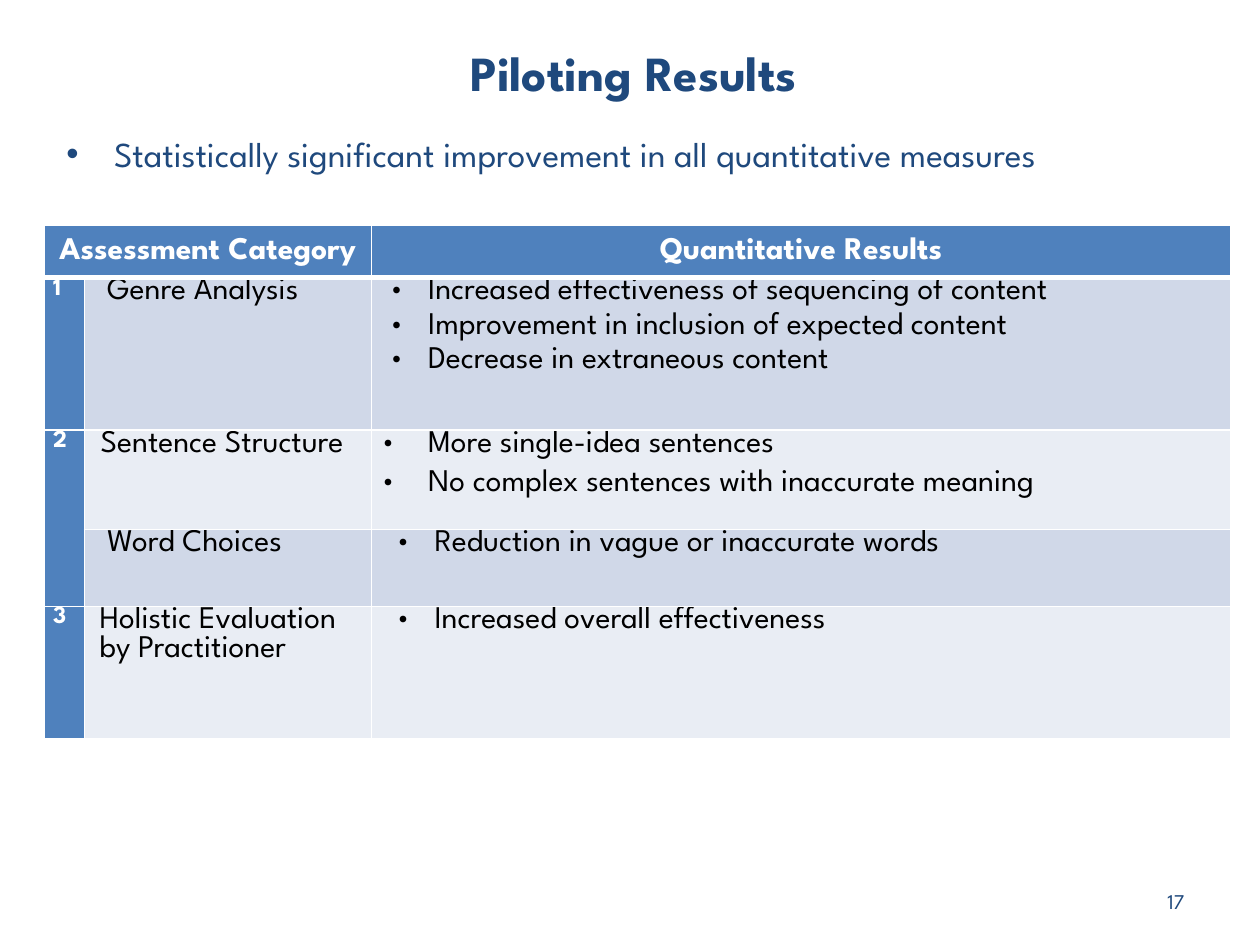
from typing import NamedTuple

from lxml.etree import SubElement
from pptx import Presentation
from pptx.dml.color import RGBColor
from pptx.enum.text import MSO_ANCHOR, PP_ALIGN
from pptx.oxml.ns import qn
from pptx.util import Cm, Pt

FONT = "League Spartan"
NAVY, BLUE, WHITE, BLACK = "1F497D", "4F81BD", "FFFFFF", "000000"
DARK_BAND, LIGHT_BAND = "D0D8E8", "E9EDF4"


class ResultRow(NamedTuple):
    number: str
    category: str
    category_indent: float
    results: list[str]
    margin: float
    hanging: float
    space_after: float
    band: str


RESULTS = [
    ResultRow("1", "Genre Analysis", 0.28,
              ["Increased effectiveness of sequencing of content",
               "Improvement in inclusion of expected content",
               "Decrease in extraneous content"], 0.96, 0.79, 3, DARK_BAND),
    ResultRow("2", "Sentence Structure", 0.15,
              ["More single-idea sentences",
               "No complex sentences with inaccurate meaning"],
              0.96, 0.96, 6, LIGHT_BAND),
    ResultRow("", " Word Choices", 0.13,
              ["Reduction in vague or inaccurate words"],
              1.09, 0.79, 3, DARK_BAND),
    ResultRow("3", "Holistic Evaluation by Practitioner", 0.13,
              ["Increased overall effectiveness"], 1.09, 0.79, 3, LIGHT_BAND),
]
COLUMN_WIDTHS = [0.81, 5.79, 17.32]
ROW_HEIGHTS = [1.05, 3.07, 2.01, 1.55, 2.67]


def color(value: str) -> RGBColor:
    return RGBColor.from_string(value)


def write(frame, *lines: str, size: float = 18, ink: str = BLACK,
          bold: bool = False, align=PP_ALIGN.LEFT, margin: float = 0,
          hanging: float = 0, space_after: float = 0, bullet_font: str = "") -> None:
    """Write one formatted paragraph per line; a bullet font makes a list."""
    frame.word_wrap = True
    for index, line in enumerate(lines):
        paragraph = frame.paragraphs[0] if index == 0 else frame.add_paragraph()
        paragraph.alignment = align
        paragraph.space_before, paragraph.space_after = Pt(0), Pt(space_after)
        properties = paragraph._p.get_or_add_pPr()
        properties.set("marL", str(Cm(margin)))
        properties.set("indent", str(-Cm(hanging)))
        if bullet_font:
            SubElement(properties, qn("a:buFont"), typeface=bullet_font)
            SubElement(properties, qn("a:buChar"), char="•")
        run = paragraph.add_run()
        run.text = line
        run.font.name, run.font.size, run.font.bold = FONT, Pt(size), bold
        run.font.color.rgb = color(ink)


def add_text(slide, left: float, top: float, width: float, height: float,
             text: str, **text_format):
    box = slide.shapes.add_textbox(Cm(left), Cm(top), Cm(width), Cm(height))
    write(box.text_frame, text, **text_format)
    return box


def format_cell(cell, fill: str, top_line: float = 1, bottom_line: float = 1) -> None:
    cell.margin_left = cell.margin_right = Cm(0.18)
    cell.margin_top = cell.margin_bottom = 0
    properties = cell._tc.get_or_add_tcPr()
    sides = {"lnL": 1, "lnR": 1, "lnT": top_line, "lnB": bottom_line}
    for side, width in sides.items():
        line = SubElement(properties, qn(f"a:{side}"), w=str(Pt(width)))
        line_fill = SubElement(line, qn("a:solidFill"))
        SubElement(line_fill, qn("a:srgbClr"), val=WHITE)
    cell.fill.solid()
    cell.fill.fore_color.rgb = color(fill)


def add_results_table(slide) -> None:
    table = slide.shapes.add_table(
        len(ROW_HEIGHTS), len(COLUMN_WIDTHS), Cm(0.89), Cm(4.55),
        Cm(sum(COLUMN_WIDTHS)), Cm(sum(ROW_HEIGHTS))).table
    for column, width in zip(table.columns, COLUMN_WIDTHS):
        column.width = Cm(width)
    for row, height in zip(table.rows, ROW_HEIGHTS):
        row.height = Cm(height)

    # Header
    for cell in table.rows[0].cells:
        format_cell(cell, BLUE, bottom_line=3)
        cell.vertical_anchor = MSO_ANCHOR.MIDDLE
    for column, heading in ((0, "Assessment Category"), (2, "Quantitative Results")):
        write(table.cell(0, column).text_frame, heading, ink=WHITE, bold=True,
              align=PP_ALIGN.CENTER)
    table.cell(0, 0).merge(table.cell(0, 1))

    # Body
    for index, result in enumerate(RESULTS, start=1):
        number, category, details = table.rows[index].cells
        for cell, fill in ((number, BLUE), (category, result.band),
                           (details, result.band)):
            format_cell(cell, fill, top_line=3 if index == 1 else 1)
        if result.number:
            write(number.text_frame, result.number, size=14, ink=WHITE, bold=True)
        write(category.text_frame, result.category, margin=result.category_indent)
        write(details.text_frame, *result.results, margin=result.margin,
              hanging=result.hanging, space_after=result.space_after,
              bullet_font=FONT)
    table.cell(2, 0).merge(table.cell(3, 0))


def main() -> None:
    presentation = Presentation()
    presentation.slide_width, presentation.slide_height = Cm(25.4), Cm(19.05)
    slide = presentation.slides.add_slide(presentation.slide_layouts[5])

    # Title
    title = slide.shapes.title
    title.left, title.top, title.width, title.height = (
        Cm(0.89), Cm(0.72), Cm(23.5), Cm(1.45))
    title.text_frame.vertical_anchor = MSO_ANCHOR.MIDDLE
    write(title.text_frame, " Piloting Results", size=28, ink=NAVY, bold=True,
          align=PP_ALIGN.CENTER)

    # Key finding
    add_text(slide, 1.09, 2.54, 23.5, 2.18,
             "Statistically significant improvement in all quantitative measures",
             size=20, ink=NAVY, margin=0.96, hanging=0.96, space_after=6,
             bullet_font="Arial")

    add_results_table(slide)

    # Slide number
    number = add_text(slide, 18.21, 17.65, 5.92, 1.02, "17", size=12, ink=NAVY,
                      align=PP_ALIGN.RIGHT)
    number.text_frame.vertical_anchor = MSO_ANCHOR.MIDDLE

    presentation.save("out.pptx")


if __name__ == "__main__":
    main()
